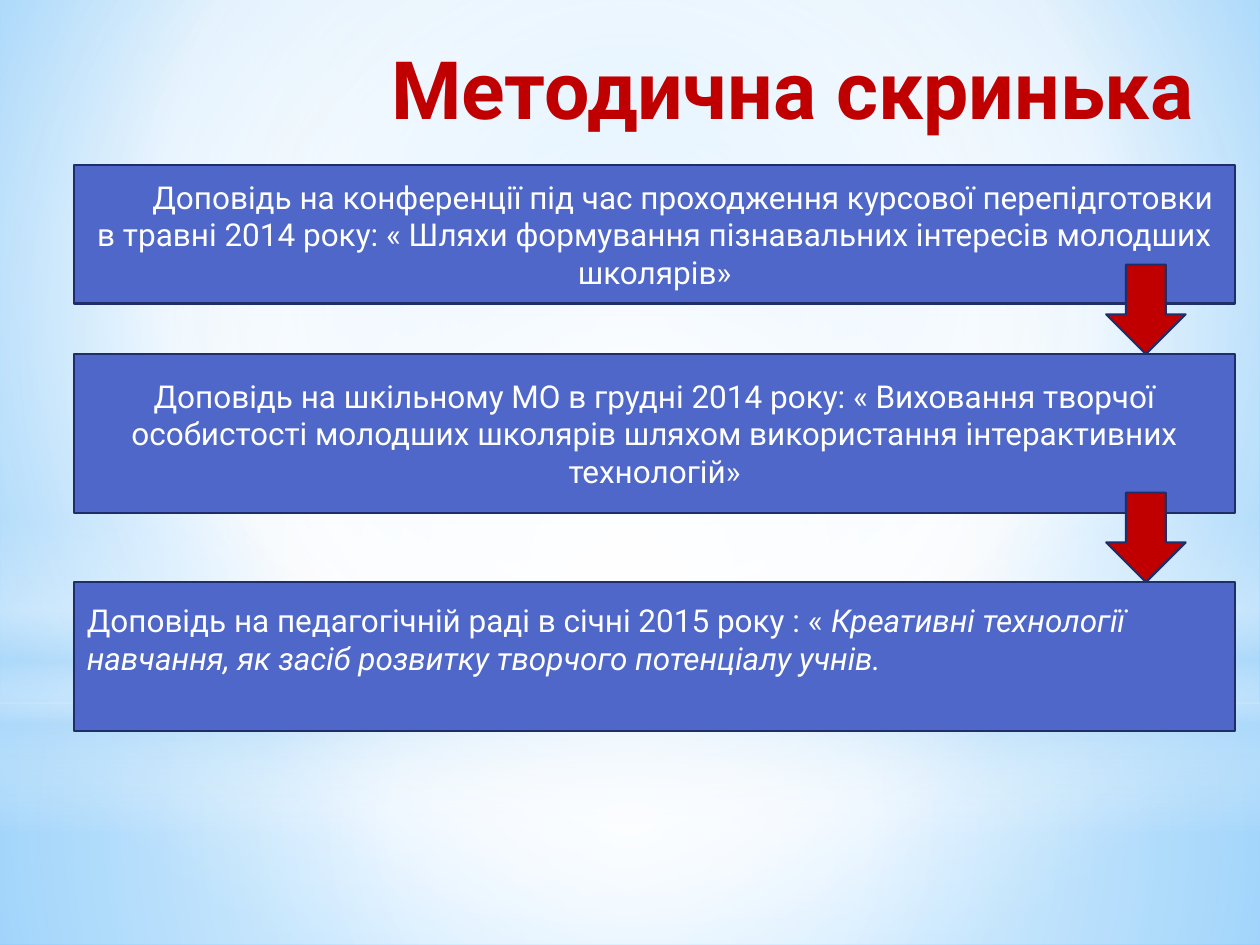
from lxml import etree
from pptx import Presentation
from pptx.dml.color import RGBColor
from pptx.enum.shapes import MSO_SHAPE
from pptx.enum.text import MSO_ANCHOR, PP_ALIGN
from pptx.oxml.ns import qn
from pptx.util import Inches, Pt

FONT = "Roboto"
BLUE, NAVY, RED, WHITE = "4E67C8", "1F2E69", "C00000", "FFFFFF"
SKY = "B4DCFA"
BOX_LEFT, BOX_WIDTH = 0.59, 9.21
ARROW_LEFT, ARROW_WIDTH, ARROW_HEIGHT = 8.78, 0.63, 0.71
CENTER = (50, 50, 50, 50)


def color(value):
    return RGBColor.from_string(value)


def set_gradient(parent, stops, focus=None):
    solid = parent.find(qn("a:solidFill"))
    grad = etree.Element(qn("a:gradFill"), rotWithShape="1")
    gs_list = etree.SubElement(grad, qn("a:gsLst"))
    for pos, value, opacity in stops:
        gs = etree.SubElement(gs_list, qn("a:gs"), pos=str(pos * 1000))
        clr = etree.SubElement(gs, qn("a:srgbClr"), val=value)
        if opacity < 100:
            etree.SubElement(clr, qn("a:alpha"), val=str(opacity * 1000))
    if focus:
        path = etree.SubElement(grad, qn("a:path"))
        path.set("path", "circle")
        rect = etree.SubElement(path, qn("a:fillToRect"))
        for side, share in zip("ltrb", focus):
            rect.set(side, str(share * 1000))
    else:
        etree.SubElement(grad, qn("a:lin"), ang="5400000", scaled="0")
    parent.replace(solid, grad)


def add_shape(slide, kind, left, top, width, height, fill=WHITE, line=None):
    sp = slide.shapes.add_shape(
        kind, Inches(left), Inches(top), Inches(width), Inches(height))
    sp.shadow.inherit = False
    sp.fill.solid()
    sp.fill.fore_color.rgb = color(fill)
    if line:
        sp.line.color.rgb = color(line)
        sp.line.width = Pt(1.25)
    else:
        sp.line.fill.background()
    return sp


def add_glow(slide, kind, top, height, stops, focus=None):
    sp = add_shape(slide, kind, 0, top, 10, height)
    set_gradient(sp._element.spPr, stops, focus)


def add_text(p, text, size=18, value=WHITE, bold=False, italic=False):
    r = p.add_run()
    r.text = text
    r.font.name = FONT
    r.font.size = Pt(size)
    r.font.bold = bold
    r.font.italic = italic
    r.font.color.rgb = color(value)


def add_box(slide, top, height, align=PP_ALIGN.CENTER, anchor=MSO_ANCHOR.MIDDLE):
    sp = add_shape(slide, MSO_SHAPE.RECTANGLE, BOX_LEFT, top, BOX_WIDTH, height,
                   BLUE, NAVY)
    tf = sp.text_frame
    tf.word_wrap = True
    tf.vertical_anchor = anchor
    p = tf.paragraphs[0]
    p.alignment = align
    return tf, p


def add_arrow(slide, tip):
    add_shape(slide, MSO_SHAPE.DOWN_ARROW, ARROW_LEFT, tip - ARROW_HEIGHT,
              ARROW_WIDTH, ARROW_HEIGHT, RED, NAVY)


def add_background(slide):
    slide.background.fill.solid()
    set_gradient(slide._element.find(".//" + qn("p:bgPr")),
                 [(0, "9ED5FF", 100), (60, WHITE, 100), (100, "5BB9FF", 100)],
                 (20, 10, 20, 60))
    add_glow(slide, MSO_SHAPE.RECTANGLE, 5.58, 1.92,
             [(0, WHITE, 91), (37, WHITE, 76), (100, SKY, 79)], CENTER)
    add_glow(slide, MSO_SHAPE.RECTANGLE, 0, 5.58,
             [(0, WHITE, 89), (48, WHITE, 62), (100, SKY, 79)], CENTER)
    add_glow(slide, MSO_SHAPE.RECTANGLE, 4.12, 2.5,
             [(0, WHITE, 0), (29, WHITE, 30), (45, SKY, 40),
              (55, WHITE, 26), (65, SKY, 60), (100, WHITE, 0)])
    add_glow(slide, MSO_SHAPE.OVAL, 1.75, 5.58,
             [(0, WHITE, 100), (56, WHITE, 0)], CENTER)


def add_title(slide, text):
    sp = slide.shapes.add_textbox(Inches(1.85), Inches(0.26), Inches(7.72), Inches(1.13))
    tf = sp.text_frame
    tf.word_wrap = True
    p = tf.paragraphs[0]
    p.alignment = PP_ALIGN.RIGHT
    add_text(p, text, size=46, value=RED, bold=True)


def main():
    prs = Presentation()
    prs.slide_width, prs.slide_height = Inches(10), Inches(7.5)
    slide = prs.slides.add_slide(prs.slide_layouts[6])
    add_background(slide)
    add_title(slide, "Методична скринька")

    tf, p = add_box(slide, 1.31, 1.1)
    p._p.get_or_add_pPr().set("indent", str(Inches(0.45)))
    add_text(p, "Доповідь на конференції під час проходження курсової перепідготовки "
                "в травні 2014 року: « Шляхи формування пізнавальних інтересів "
                "молодших школярів»")

    tf, p = add_box(slide, 2.81, 1.26)
    add_text(p, "Доповідь на шкільному МО в грудні 2014 року: « Виховання творчої "
                "особистості молодших школярів шляхом використання інтерактивних "
                "технологій»")

    tf, p = add_box(slide, 4.62, 1.18, PP_ALIGN.LEFT, MSO_ANCHOR.TOP)
    tf.margin_top = Inches(0.15)
    add_text(p, "Доповідь на педагогічній раді в січні 2015 року : « ")
    add_text(p, "Креативні технології навчання, як засіб розвитку творчого "
                "потенціалу учнів.", italic=True)

    for tip in (2.81, 4.62):
        add_arrow(slide, tip)
    prs.save("out.pptx")


if __name__ == "__main__":
    main()
